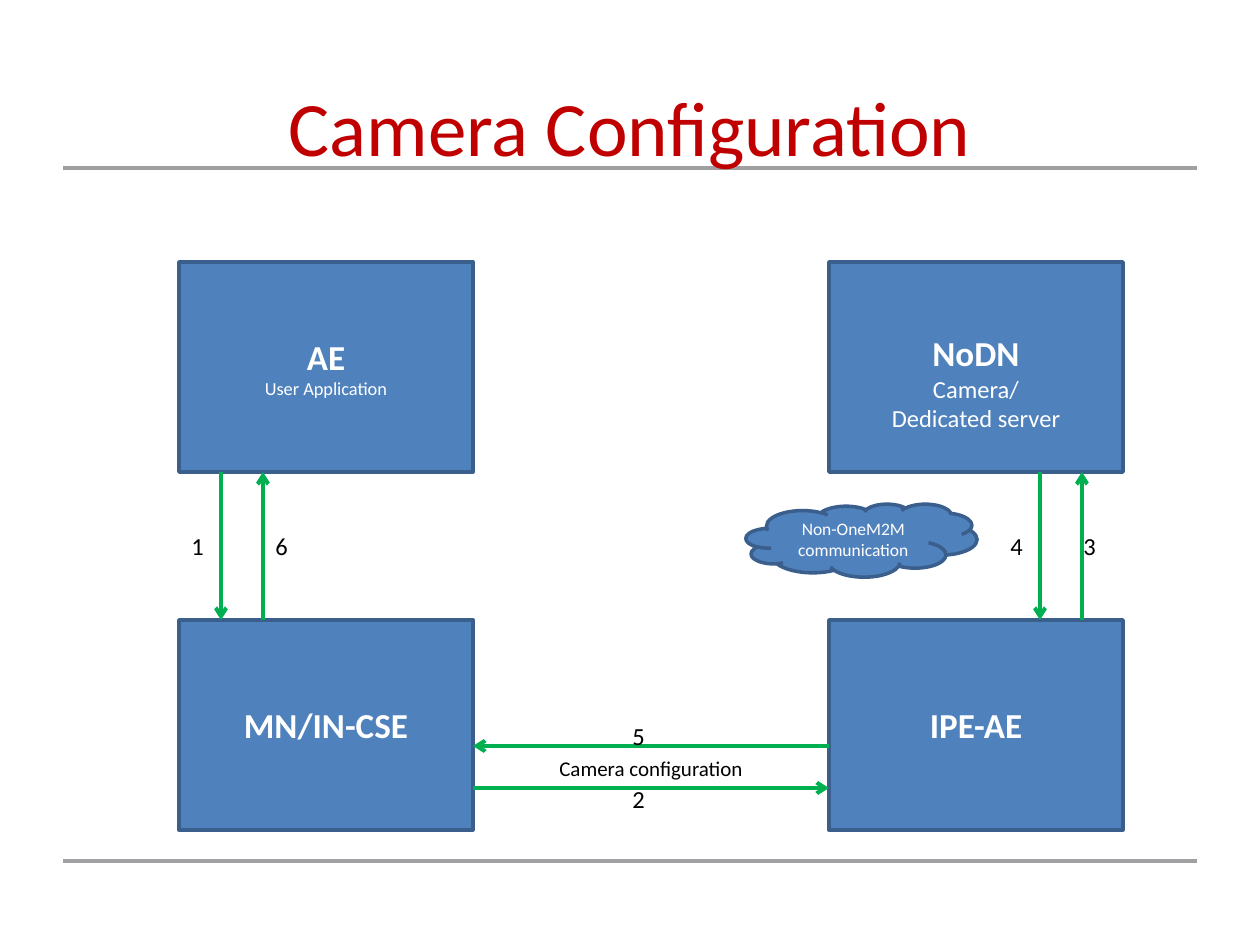
from lxml import etree
from pptx import Presentation
from pptx import util as u
from pptx.dml.color import RGBColor
from pptx.enum import shapes, text
from pptx.oxml.ns import qn

SCALE = 914400 / 126
BOX_W, BOX_H = 294, 210
LEFT, RIGHT = 179, 829
TOP, BOTTOM = 262, 620
GAP = 42
WHITE, BLACK, BLUE, NAVY = "FFFFFF", "000000", "4F81BD", "3A5F8C"
GREEN, GREY, RED = "00B050", "A0A0A3", "C00000"


def px(*lengths):
    """Turn pixel lengths into EMU."""
    return [u.Emu(round(n * SCALE)) for n in lengths]


def paint(color_format, color):
    """Set a colour from a hex string."""
    color_format.rgb = RGBColor.from_string(color)


def write(tf, lines, color, align=text.PP_ALIGN.CENTER):
    """Fill a text frame with (text, size, bold) lines."""
    tf.text = "\n".join(line[0] for line in lines)
    for p, (_, size, bold) in zip(tf.paragraphs, lines):
        p.alignment = align
        for r in p.runs:
            r.font.name, r.font.size, r.font.bold = "Calibri", u.Pt(size), bold
            paint(r.font.color, color)


def add_node(s, kind, box, lines, drop=0):
    """Draw a filled shape with centred lines, lowered by a top inset."""
    sp = s.shapes.add_shape(kind, *px(*box))
    sp.shadow.inherit = False
    sp.fill.solid()
    paint(sp.fill.fore_color, BLUE)
    paint(sp.line.color, NAVY)
    sp.line.width = u.Pt(2)
    tf = sp.text_frame
    tf.word_wrap = True
    tf.vertical_anchor = text.MSO_ANCHOR.MIDDLE
    tf.margin_top += px(drop)[0]
    write(tf, lines, WHITE)


def add_line(s, ends, color, width, arrow=False):
    """Draw a straight line, with an arrowhead at its end if asked."""
    line = s.shapes.add_connector(shapes.MSO_CONNECTOR.STRAIGHT, *px(*ends))
    paint(line.line.color, color)
    line.line.width = u.Pt(width)
    if arrow:
        etree.SubElement(line.line._get_or_add_ln(), qn("a:tailEnd"), type="arrow")
    etree.SubElement(line.element.spPr, qn("a:effectLst"))
    return line


def add_label(s, box, label, size=14, wrap=False):
    """Place a label, centred when it wraps."""
    tf = s.shapes.add_textbox(*px(*box)).text_frame
    tf.word_wrap = wrap
    tf.auto_size = text.MSO_AUTO_SIZE.SHAPE_TO_FIT_TEXT
    align = text.PP_ALIGN.CENTER if wrap else text.PP_ALIGN.LEFT
    write(tf, [(label, size, False)], BLACK, align)


def add_heading(s, x, y, w, h):
    """Place the title in front of the two page rules."""
    title = s.shapes.title
    title.left, title.top, title.width, title.height = px(x, y, w, h)
    title.text_frame.vertical_anchor = text.MSO_ANCHOR.TOP
    write(title.text_frame, [("Camera Configuration", 44, False)], RED)
    for rule_y in (y + 788, y + 95):
        rule = add_line(s, (x, rule_y, x + w, rule_y), GREY, 1.75)
        title.element.addprevious(rule.element)


def add_vertical_links(s, x, y, h, labels):
    """Draw a down and an up arrow, each with a (number, offset) label."""
    add_line(s, (x, y, x, y + h), GREEN, 2.25, True)
    add_line(s, (x + GAP, y + h, x + GAP, y), GREEN, 2.25, True)
    for label, dx in labels:
        add_label(s, (x + dx, y + 53, 38, 43), label)


def add_horizontal_links(s, x, y, w):
    """Draw a left and a right arrow around their caption."""
    add_label(s, (x, y + 3, w, 63), "Camera configuration", 12, True)
    add_line(s, (x + w, y, x, y), GREEN, 2.25, True)
    add_line(s, (x, y + GAP, x + w, y + GAP), GREEN, 2.25, True)
    for label, dy in (("5", -31), ("2", 32)):
        add_label(s, (x + 147, y + dy, 38, 43), label)


def main():
    """Build the slide and save it."""
    prs = Presentation()
    prs.slide_width, prs.slide_height = px(1260, 945)
    s = prs.slides.add_slide(prs.slide_layouts[5])
    add_heading(s, 63, 73, 1134, 158)

    nodes = [
        (LEFT, TOP, [("AE", 20, True), ("User Application", 10.5, False)], 0),
        (LEFT, BOTTOM, [("MN/IN-CSE", 20, True)], 0),
        (RIGHT, BOTTOM, [("IPE-AE", 20, True)], 0),
        (RIGHT, TOP, [("NoDN", 20, True), ("Camera/", 14, False),
                      ("Dedicated server", 14, False)], 30),
    ]
    for x, y, lines, drop in nodes:
        add_node(s, shapes.MSO_SHAPE.RECTANGLE, (x, y, BOX_W, BOX_H), lines, drop)

    link_y = TOP + BOX_H
    link_h = BOTTOM - link_y
    add_vertical_links(s, LEFT + GAP, link_y, link_h, [("1", -42), ("6", 42)])
    add_vertical_links(s, RIGHT + 211, link_y, link_h, [("4", -42), ("3", 31)])
    add_horizontal_links(s, LEFT + BOX_W, BOTTOM + 126, RIGHT - LEFT - BOX_W)
    add_node(s, shapes.MSO_SHAPE.CLOUD, (746, 504, 231, 73),
             [("Non-OneM2M communication", 10, False)])
    prs.save("out.pptx")


if __name__ == "__main__":
    main()
